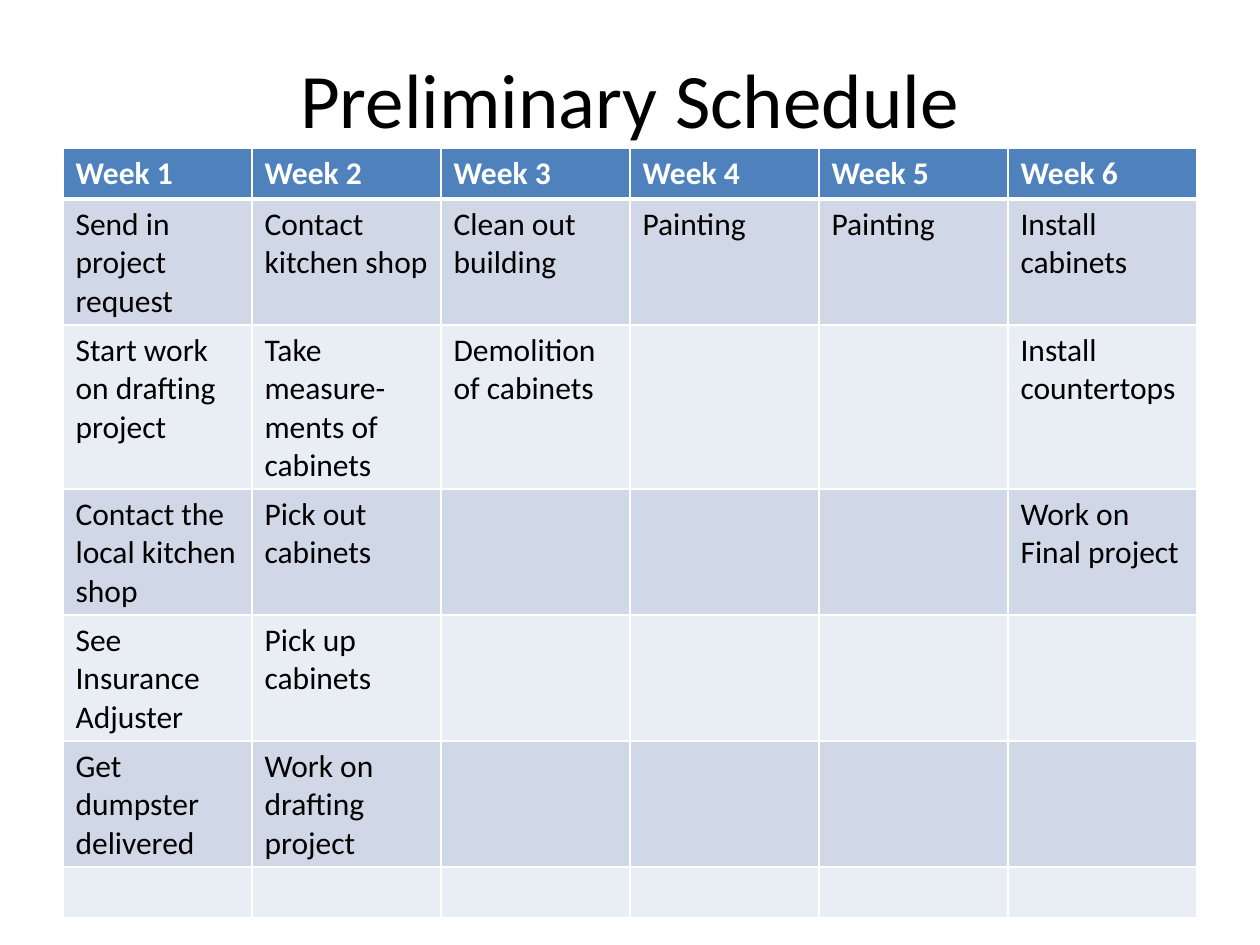
from lxml.etree import SubElement as Sub
from pptx import Presentation
from pptx.dml.color import RGBColor as Rgb
from pptx.enum.text import MSO_ANCHOR as Anchor, PP_ALIGN as Align
from pptx.oxml.ns import qn
from pptx.util import Cm, Pt

WHITE = Rgb(0xFF, 0xFF, 0xFF)
BLACK = Rgb(0, 0, 0)
BLUE = Rgb(0x4F, 0x81, 0xBD)
BANDS = Rgb(0xE9, 0xED, 0xF4), Rgb(0xD0, 0xD8, 0xE8)
FONT = "Calibri"
ROW = Cm(1.03)

WEEKS = [
    ["Send in project request", "Start work on drafting project",
     "Contact the local kitchen shop", "See Insurance Adjuster",
     "Get dumpster delivered"],
    ["Contact kitchen shop", "Take measure-ments of cabinets",
     "Pick out cabinets", "Pick up cabinets", "Work on drafting project"],
    ["Clean out building", "Demolition of cabinets"],
    ["Painting"],
    ["Painting"],
    ["Install cabinets", "Install countertops", "Work on Final project"],
]
TASKS = 6


def write(frame, text, size=18, color=BLACK, bold=False, align=Align.LEFT):
    para = frame.paragraphs[0]
    para.alignment = align
    if not text:
        para.font.size = Pt(size)
        return
    run = para.add_run()
    run.text = text
    font = run.font
    font.name, font.size, font.bold = FONT, Pt(size), bold
    font.color.rgb = color


def edge(cell, **widths):
    """Draw white borders; each keyword is a side (L, R, T, B) in points."""
    props = cell._tc.get_or_add_tcPr()
    for side in "LRTB":
        line = Sub(props, qn(f"a:ln{side}"), w=str(Pt(widths.get(side, 1))))
        fill = Sub(line, qn("a:solidFill"))
        Sub(fill, qn("a:srgbClr"), val=str(WHITE))


def paint(cell, color):
    cell.fill.solid()
    cell.fill.fore_color.rgb = color


def title(slide, left, top, width, height):
    frame = slide.shapes.add_textbox(left, top, width, height).text_frame
    frame.word_wrap = True
    frame.vertical_anchor = Anchor.MIDDLE
    write(frame, "Preliminary Schedule", size=44, align=Align.CENTER)


def schedule(slide, left, top, width):
    rows = TASKS + 1
    table = slide.shapes.add_table(
        rows, len(WEEKS), left, top, width, ROW * rows).table
    for row in table.rows:
        row.height = ROW
    for col, tasks in enumerate(WEEKS):
        table.columns[col].width = width // len(WEEKS)
        head = table.cell(0, col)
        edge(head, B=3)
        paint(head, BLUE)
        write(head.text_frame, f"Week {col + 1}", color=WHITE, bold=True)
        for row in range(1, rows):
            cell = table.cell(row, col)
            edge(cell, T=3 if row == 1 else 1)
            paint(cell, BANDS[row % 2])
            task = tasks[row - 1] if row <= len(tasks) else ""
            write(cell.text_frame, task)


def main():
    deck = Presentation()
    deck.slide_width, deck.slide_height = Cm(25.4), Cm(19.05)
    slide = deck.slides.add_slide(deck.slide_layouts[6])
    left, width = Cm(1.27), Cm(22.86)
    title(slide, left, Cm(0.76), width, Cm(2.41))
    schedule(slide, left, Cm(2.98), width)
    deck.save("out.pptx")


if __name__ == "__main__":
    main()
